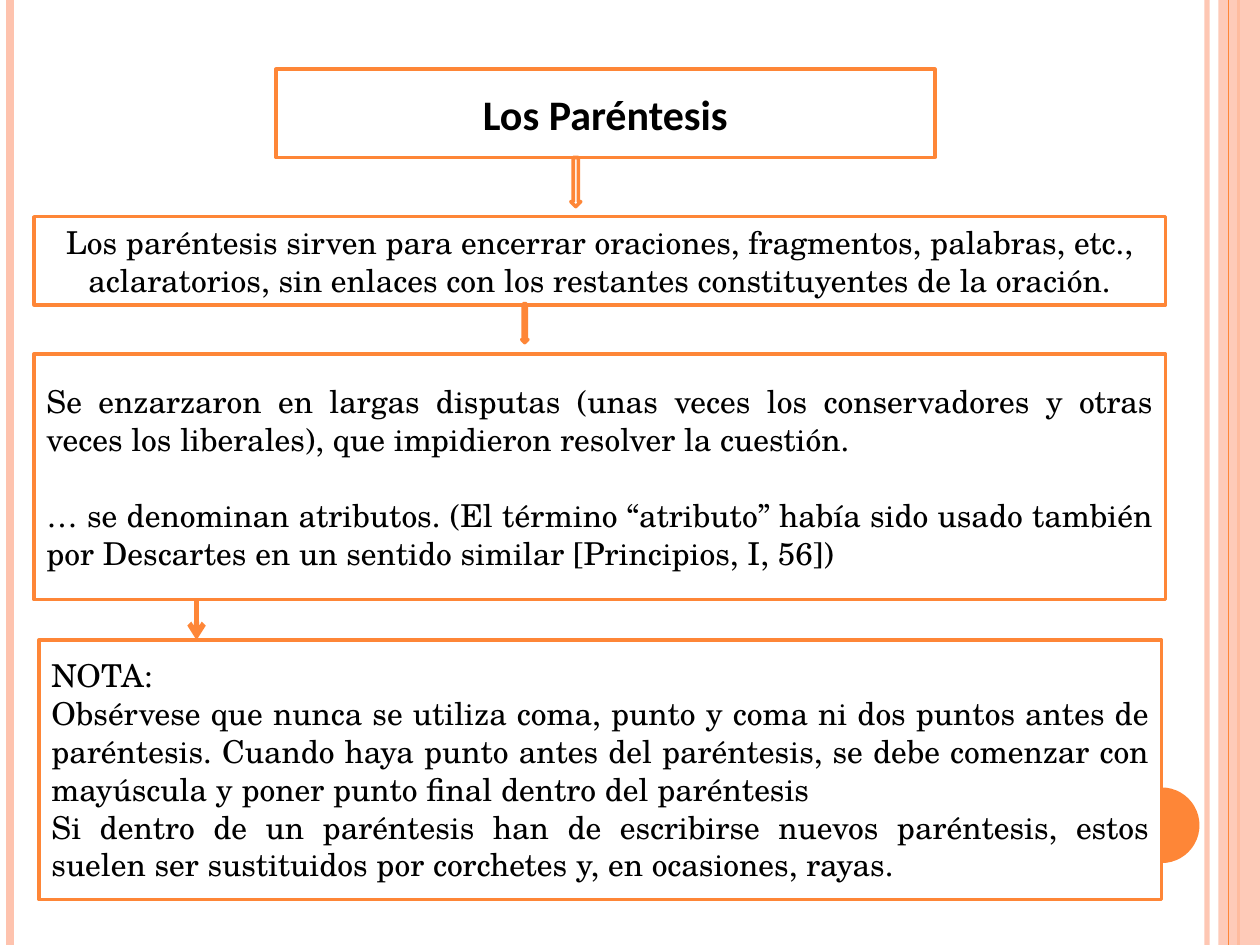
from dataclasses import dataclass
from lxml import etree
from pptx import Presentation
from pptx.dml.color import RGBColor
from pptx.enum.shapes import MSO_CONNECTOR, MSO_SHAPE
from pptx.enum.text import MSO_ANCHOR, PP_ALIGN
from pptx.oxml.ns import qn
from pptx.util import Inches, Pt


@dataclass(frozen=True)
class Theme:
    orange: RGBColor = RGBColor(0xFE, 0x86, 0x37)
    peach: RGBColor = RGBColor(0xFE, 0xC3, 0xAE)
    white: RGBColor = RGBColor(0xFF, 0xFF, 0xFF)
    black: RGBColor = RGBColor(0, 0, 0)
    title_font: str = "Calibri"
    body_font: str = "TeX Gyre Schola"
    title_size: Pt = Pt(24)
    body_size: Pt = Pt(18)
    border: Pt = Pt(2)


THEME = Theme()

DEFINITION = [
    "Los paréntesis sirven para encerrar oraciones, fragmentos, palabras, etc., "
    "aclaratorios, sin enlaces con los restantes constituyentes de la oración.",
]
EXAMPLES = [
    "Se enzarzaron en largas disputas (unas veces los conservadores y otras veces "
    "los liberales), que impidieron resolver la cuestión.",
    "… se denominan atributos. (El término “atributo” había sido usado también por "
    "Descartes en un sentido similar [Principios, I, 56])",
]
NOTE = [
    "NOTA:",
    "Obsérvese que nunca se utiliza coma, punto y coma ni dos puntos antes de "
    "paréntesis. Cuando haya punto antes del paréntesis, se debe comenzar con "
    "mayúscula y poner punto final dentro del paréntesis",
    "Si dentro de un paréntesis han de escribirse nuevos paréntesis, estos suelen "
    "ser sustituidos por corchetes y, en ocasiones, rayas.",
]


def set_alpha(color_format_parent, percent):
    color = color_format_parent.find(".//" + qn("a:srgbClr"))
    etree.SubElement(color, qn("a:alpha")).set("val", str(percent * 1000))


def add_shape(s, kind, box, fill, border=None):
    sp = s.shapes.add_shape(kind, *map(Inches, box))
    sp.shadow.inherit = False
    sp.fill.solid()
    sp.fill.fore_color.rgb = fill
    if border:
        sp.line.color.rgb = border
        sp.line.width = THEME.border
    else:
        sp.line.fill.background()
    return sp


def add_vertical(s, x, top, bottom, color, width):
    line = s.shapes.add_connector(
        MSO_CONNECTOR.STRAIGHT, Inches(x), Inches(top), Inches(x), Inches(bottom))
    line.line.color.rgb = color
    line.line.width = Pt(width)
    etree.SubElement(line._element.spPr, qn("a:effectLst"))
    return line


def add_side_bands(s, box):
    left, top, width, height = box
    right, bottom = left + width, top + height
    inner = add_vertical(s, right - 0.42, top, bottom, THEME.peach, 3)
    set_alpha(inner._element.spPr, 93)
    add_vertical(s, left + 0.08, top, bottom, THEME.peach, 4.5)
    add_vertical(s, right - 0.17, top, bottom, THEME.orange, 1.5)
    band = add_shape(s, MSO_SHAPE.RECTANGLE, (right - 0.33, top, 0.33, height), THEME.peach)
    set_alpha(band._element.spPr, 87)
    add_vertical(s, right - 0.25, top, bottom, THEME.orange, 0.75)
    add_shape(s, MSO_SHAPE.OVAL, (right - 1.08, bottom - 1.25, 0.6, 0.6), THEME.orange)


def add_text_box(s, box, paragraphs, align, font=THEME.body_font,
                 size=THEME.body_size, bold=False, gap=0):
    sp = add_shape(s, MSO_SHAPE.RECTANGLE, box, THEME.white, THEME.orange)
    tf = sp.text_frame
    tf.word_wrap = True
    tf.vertical_anchor = MSO_ANCHOR.MIDDLE
    for i, text in enumerate(paragraphs):
        p = tf.add_paragraph() if i else tf.paragraphs[0]
        p.text = text
        p.alignment = align
        p.space_before = Pt(gap if i else 0)
        p.font.name = font
        p.font.size = size
        p.font.bold = bold
        p.font.color.rgb = THEME.black


def add_block_arrow(s, box):
    add_shape(s, MSO_SHAPE.DOWN_ARROW, box, THEME.white, THEME.orange)


def add_line_arrow(s, x, top, bottom):
    arrow = add_vertical(s, x, top, bottom, THEME.orange, 3)
    ln = arrow.line._get_or_add_ln()
    etree.SubElement(ln, qn("a:tailEnd")).set("type", "arrow")


def build_slide(prs):
    s = prs.slides.add_slide(prs.slide_layouts[6])
    add_side_bands(s, (0, 0, 10, 7.5))
    add_text_box(s, (2.19, 0.55, 5.23, 0.7), ["Los Paréntesis"], PP_ALIGN.CENTER,
                 THEME.title_font, THEME.title_size, bold=True)
    add_text_box(s, (0.27, 1.72, 8.98, 0.7), DEFINITION, PP_ALIGN.CENTER)
    add_block_arrow(s, (4.53, 1.25, 0.08, 0.39))
    add_text_box(s, (0.27, 2.81, 8.98, 1.95), EXAMPLES, PP_ALIGN.JUSTIFY, gap=21.6)
    add_text_box(s, (0.31, 5.08, 8.91, 2.06), NOTE, PP_ALIGN.JUSTIFY)
    add_block_arrow(s, (4.14, 2.41, 0.05, 0.31))
    add_line_arrow(s, 1.56, 4.77, 5.08)


def main():
    prs = Presentation()
    prs.slide_width, prs.slide_height = Inches(10), Inches(7.5)
    build_slide(prs)
    prs.save("out.pptx")


if __name__ == "__main__":
    main()
